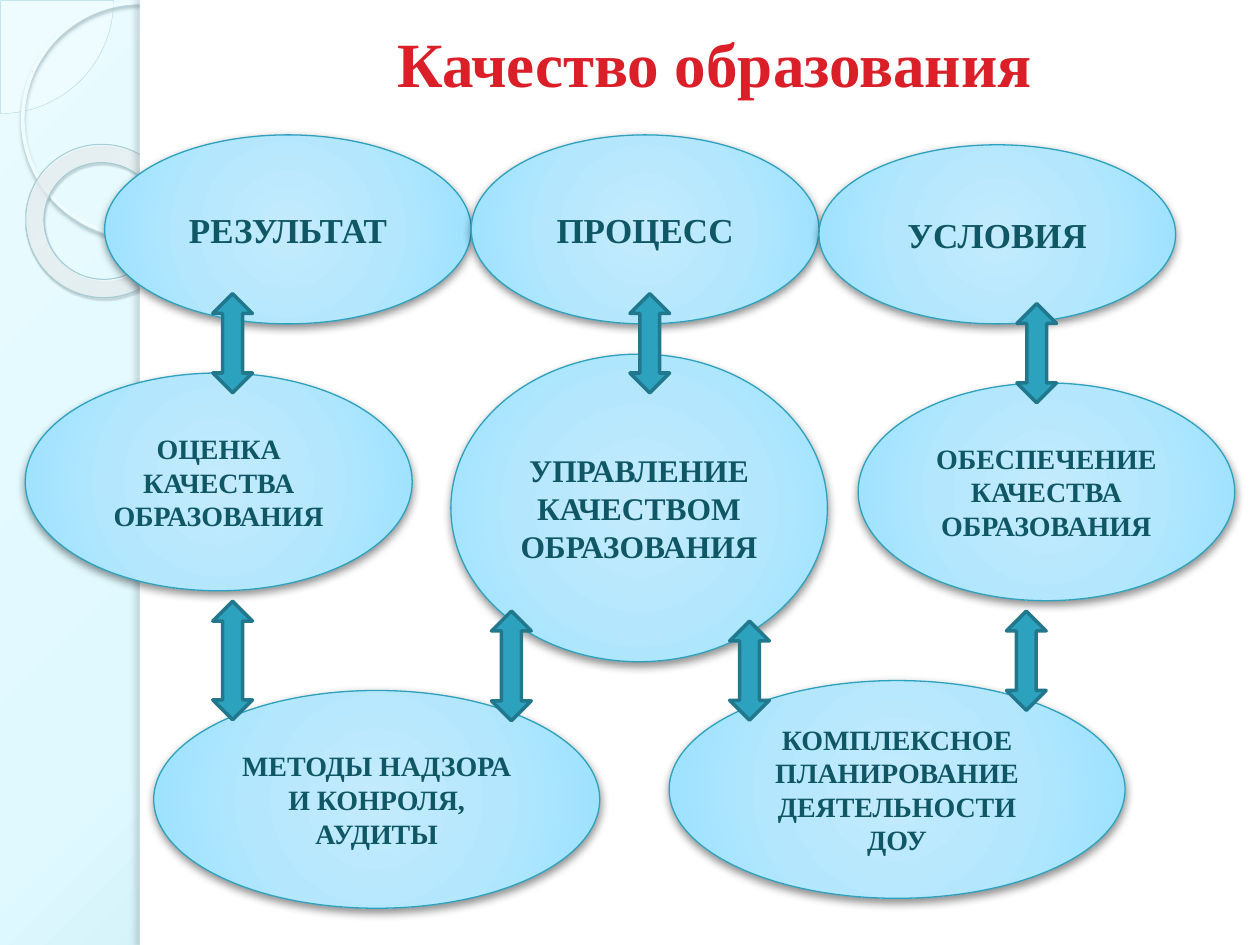
"""Build the slide on the quality of education."""
from dataclasses import dataclass

import lxml.etree
import pptx
import pptx.dml.color
import pptx.enum.shapes
import pptx.enum.text
import pptx.oxml.ns
import pptx.util

Cm = pptx.util.Cm
Pt = pptx.util.Pt
Kind = pptx.enum.shapes.MSO_SHAPE
FONT = "Times New Roman"
WIDE, HIGH = 25.4, 19.05
GLOW = [(0, "C3EBFD", 100), (50, "B4E7FD", 100), (97, "9AE1FF", 100), (100, "93DFFF", 100)]
DROP = ("000000", 43, 5, 2, 90)


@dataclass
class Bubble:
    left: float
    top: float
    width: float
    height: float
    size: int
    text: str


@dataclass
class Arrow:
    left: float
    top: float
    height: float


BUBBLES = [
    Bubble(2.11, 2.72, 7.39, 3.81, 20, "РЕЗУЛЬТАТ"),
    Bubble(9.5, 2.72, 7.01, 3.81, 20, "ПРОЦЕСС"),
    Bubble(16.51, 2.92, 7.19, 3.61, 20, "УСЛОВИЯ"),
    Bubble(0.51, 7.52, 7.8, 4.39, 16, "ОЦЕНКА КАЧЕСТВА ОБРАЗОВАНИЯ"),
    Bubble(17.3, 7.72, 7.59, 4.39, 16, "ОБЕСПЕЧЕНИЕ КАЧЕСТВА ОБРАЗОВАНИЯ"),
    Bubble(3.1, 13.92, 8.99, 4.39, 16, "МЕТОДЫ НАДЗОРА И КОНРОЛЯ, АУДИТЫ"),
    Bubble(9.09, 7.14, 7.59, 6.2, 18, "УПРАВЛЕНИЕ КАЧЕСТВОМ ОБРАЗОВАНИЯ"),
    Bubble(13.49, 13.72, 9.19, 4.39, 16, "КОМПЛЕКСНОЕ ПЛАНИРОВАНИЕ\nДЕЯТЕЛЬНОСТИ ДОУ"),
]

ARROWS = [
    Arrow(12.7, 5.92, 2),
    Arrow(20.5, 6.12, 2),
    Arrow(4.29, 5.92, 2),
    Arrow(4.29, 12.12, 2.39),
    Arrow(20.29, 12.32, 2),
    Arrow(9.91, 12.32, 2.21),
    Arrow(14.71, 12.52, 2),
]


def rgb(code: str) -> pptx.dml.color.RGBColor:
    """Turn a hex string into a colour."""
    return pptx.dml.color.RGBColor.from_string(code)


def child(node, tag: str, **attrs):
    """Add a drawing element with the given attributes."""
    values = {key: str(value) for key, value in attrs.items()}
    return lxml.etree.SubElement(node, pptx.oxml.ns.qn(f"a:{tag}"), values)


def tint(node, code: str, alpha: int) -> None:
    """Add a colour with its opacity in percent."""
    child(child(node, "srgbClr", val=code), "alpha", val=alpha * 1000)


def fade(owner, fill, stops: list, rect: tuple = (50, 50, 50, 50)) -> None:
    """Fill the owner with a circular gradient."""
    fill.gradient()
    node = next(owner.element.iter(pptx.oxml.ns.qn("a:gradFill")))
    node.clear()
    group = child(node, "gsLst")
    for spot, code, alpha in stops:
        tint(child(group, "gs", pos=spot * 1000), code, alpha)
    sides = {key: value * 1000 for key, value in zip("ltrb", rect)}
    child(child(node, "path", path="circle"), "fillToRect", **sides)


def shade(shape, code: str, alpha: int, blur: float, gap: float, angle: int) -> None:
    """Give the shape an outer shadow."""
    node = shape.element.spPr.find(pptx.oxml.ns.qn("a:effectLst"))
    drop = child(node, "outerShdw", blurRad=int(Pt(blur)), dist=int(Pt(gap)),
                 dir=angle * 60000, algn="ctr", rotWithShape=0)
    tint(drop, code, alpha)


def draw(slide, kind, box: tuple, fill: str = "", line: str = "", weight: float = 0):
    """Draw a preset shape with a plain fill and line."""
    shape = slide.shapes.add_shape(kind, *(Cm(value) for value in box))
    shape.shadow.inherit = False
    if fill:
        shape.fill.solid()
        shape.fill.fore_color.rgb = rgb(fill)
    else:
        shape.fill.background()
    if line:
        shape.line.color.rgb = rgb(line)
        shape.line.width = Pt(weight)
    else:
        shape.line.fill.background()
    return shape


def write(shape, text: str, size: int, code: str) -> None:
    """Set centred bold text in the shape."""
    frame = shape.text_frame
    frame.text = text
    frame.word_wrap = True
    frame.vertical_anchor = pptx.enum.text.MSO_ANCHOR.MIDDLE
    for para in frame.paragraphs:
        para.alignment = pptx.enum.text.PP_ALIGN.CENTER
        for run in para.runs:
            run.font.name = FONT
            run.font.size = Pt(size)
            run.font.bold = True
            run.font.color.rgb = rgb(code)


def adorn(slide) -> None:
    """Draw the side strip with its rings and the white page."""
    fade(slide, slide.background.fill,
         [(0, "E9FBFF", 100), (40, "DFF9FF", 100), (100, "96CBD6", 100)],
         (-24, -20, 124, 120))
    pie = draw(slide, Kind.PIE, (-2.26, -2.26, 4.55, 4.55), line="B2DAE2", weight=0.25)
    pie.adjustments[0] = 0
    pie.adjustments[1] = 54.02
    fade(pie, pie.fill, [(0, "F9FEFF", 33), (100, "F9FEFF", 33)])
    ring = draw(slide, Kind.OVAL, (0.46, 0.05, 4.72, 4.72), line="EFFCFF", weight=2.15)
    shade(ring, "9FB9BE", 85, 2, 2, 90)
    donut = draw(slide, Kind.DONUT, (0.51, 2.92, 3.12, 3.07), line="A4CDD6", weight=0.58)
    donut.adjustments[0] = 0.12
    donut.rotation = 38.6
    fade(donut, donut.fill, [(0, "F9FEFF", 70), (70, "FDFFFF", 55), (100, "A3EEFE", 60)],
         (-408, -50, 508, 150))
    shade(donut, "4C5D61", 35, 1, 1.2, 75)
    draw(slide, Kind.RECTANGLE, (2.82, 0, WIDE - 2.82, HIGH), "FFFFFF")
    edge = draw(slide, Kind.RECTANGLE, (2.82, 0, 0.2, HIGH), "FFFFFF")
    shade(edge, "6E7A7D", 25, 3, 3, 180)


def head(slide) -> None:
    """Place the title above the side strip and page."""
    title = slide.shapes.title
    slide.shapes.element.append(title.element)
    title.left, title.top, title.width, title.height = Cm(3.99), Cm(0), Cm(20.83), Cm(2.51)
    write(title, "Качество образования", 36, "DA1F28")


def bubble(slide, item: Bubble) -> None:
    """Draw one glowing ellipse with its label."""
    box = (item.left, item.top, item.width, item.height)
    shape = draw(slide, Kind.OVAL, box, line="2DA2BF", weight=0.75)
    fade(shape, shape.fill, GLOW)
    shade(shape, *DROP)
    write(shape, item.text, item.size, "105766")


def arrow(slide, item: Arrow) -> None:
    """Draw one double arrow."""
    box = (item.left, item.top, 0.8, item.height)
    draw(slide, Kind.UP_DOWN_ARROW, box, "2DA2BF", "21788D", 2)


def main() -> None:
    """Build and save the deck."""
    deck = pptx.Presentation()
    deck.slide_width, deck.slide_height = Cm(WIDE), Cm(HIGH)
    slide = deck.slides.add_slide(deck.slide_layouts[5])
    adorn(slide)
    head(slide)
    for item in BUBBLES:
        bubble(slide, item)
    for item in ARROWS:
        arrow(slide, item)
    deck.save("out.pptx")


if __name__ == "__main__":
    main()
